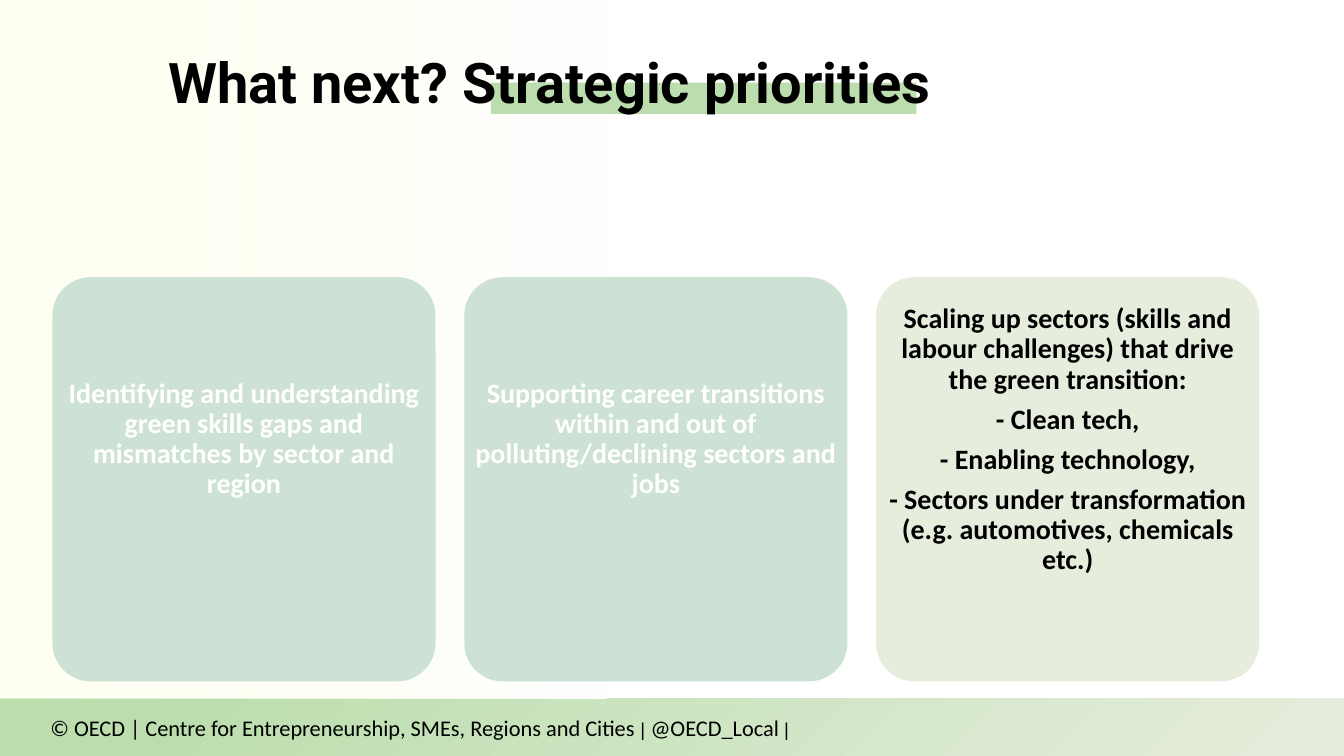
import pptx
import pptx.util
import pptx.dml.color
import pptx.enum.shapes
import pptx.enum.text
import pptx.oxml
import pptx.oxml.ns

Inches = pptx.util.Inches
Pt = pptx.util.Pt
SHAPE = pptx.enum.shapes.MSO_SHAPE
ALIGN = pptx.enum.text.PP_ALIGN
ANCHOR = pptx.enum.text.MSO_ANCHOR

COLORS = {
    "black": "000000",
    "white": "FFFFFF",
    "cream": "FFFFE7",
    "green": "BCDEAE",
    "mint": "CEE1D5",
    "sage": "E6EDDD",
}

CARD_W, CARD_H, CARD_TOP = 3.8, 4.01, 2.75
CARD_LEFT, CARD_PITCH = 0.52, 4.085

# Fill, text colour, text offset from the card top, paragraphs
CARDS = [
    ("mint", "white", 0.93,
     ["Identifying and understanding green skills gaps and mismatches by sector and region"]),
    ("mint", "white", 0.93,
     ["Supporting career transitions within and out of polluting/declining sectors and jobs"]),
    ("sage", "black", 0.19,
     ["Scaling up sectors (skills and labour challenges) that drive the green transition:",
      "- Clean tech,",
      "- Enabling technology,",
      "- Sectors under transformation (e.g. automotives, chemicals etc.)"]),
]

FOOTER = [
    ("© OECD | Centre for Entrepreneurship, SMEs, Regions and Cities", 16, "Calibri"),
    (" | ", 13.3, "Arial"),
    ("@OECD_Local", 16, "Calibri"),
    (" |", 13.3, "Arial"),
]


def rgb(name):
    return pptx.dml.color.RGBColor.from_string(COLORS[name])


def add_block(s, kind, x, y, w, h, fill=None):
    sp = s.shapes.add_shape(kind, Inches(x), Inches(y), Inches(w), Inches(h))
    sp.shadow.inherit = False
    sp.line.fill.background()
    if fill:
        sp.fill.solid()
        sp.fill.fore_color.rgb = rgb(fill)
    return sp


def set_gradient(sp, stops, direction):
    """Fill with (position %, colour, opacity %) stops; direction is the XML of the lin or path element."""
    gs = "".join(
        f'<a:gs pos="{pos * 1000}"><a:srgbClr val="{COLORS[color]}">'
        f'<a:alpha val="{alpha * 1000}"/></a:srgbClr></a:gs>'
        for pos, color, alpha in stops)
    grad = pptx.oxml.parse_xml(
        f'<a:gradFill {pptx.oxml.ns.nsdecls("a")} rotWithShape="1">'
        f'<a:gsLst>{gs}</a:gsLst>{direction}</a:gradFill>')
    sp._element.spPr.find(pptx.oxml.ns.qn("a:prstGeom")).addnext(grad)


def add_text_frame(s, x, y, w, h, anchor, inset):
    tf = s.shapes.add_textbox(Inches(x), Inches(y), Inches(w), Inches(h)).text_frame
    tf.word_wrap = True
    tf.vertical_anchor = anchor
    tf.margin_left = tf.margin_right = Inches(inset)
    tf.margin_top = tf.margin_bottom = Inches(0.08)
    return tf


def add_run(p, text, size, font, color, bold=False):
    r = p.add_run()
    r.text = text
    r.font.size = Pt(size)
    r.font.name = font
    r.font.bold = bold
    r.font.color.rgb = rgb(color)


def add_background(s):
    footer = add_block(s, SHAPE.RECTANGLE, 0, 6.93, 13.33, 0.57)
    set_gradient(footer, [(0, "sage", 100), (86, "green", 100)],
                 '<a:path path="circle"><a:fillToRect l="100000" t="100000"/></a:path>')
    glow = add_block(s, SHAPE.RECTANGLE, 0, 0, 6.02, 6.93)
    set_gradient(glow, [(0, "white", 100), (100, "cream", 50)],
                 '<a:lin ang="10800000" scaled="0"/>')


def add_footer_text(s):
    p = add_text_frame(s, 0.37, 7.02, 12, 0.4, ANCHOR.MIDDLE, 0.13).paragraphs[0]
    for text, size, font in FOOTER:
        add_run(p, text, size, font, "black")


def add_title(s):
    add_block(s, SHAPE.RECTANGLE, 4.87, 0.82, 4.22, 0.31, "green")
    p = add_text_frame(s, 1.57, 0.26, 10.81, 1.12, ANCHOR.MIDDLE, 0.1).paragraphs[0]
    p.line_spacing = Pt(45.3)
    add_run(p, "What next? Strategic priorities", 40, "Roboto", "black", True)


def add_card(s, x, fill, color, offset, lines):
    card = add_block(s, SHAPE.ROUNDED_RECTANGLE, x, CARD_TOP, CARD_W, CARD_H, fill)
    card.adjustments[0] = 0.1
    tf = add_text_frame(s, x, CARD_TOP + offset, CARD_W, CARD_H - offset, ANCHOR.TOP, 0.08)
    for i, line in enumerate(lines):
        p = tf.paragraphs[0] if i == 0 else tf.add_paragraph()
        p.alignment = ALIGN.CENTER
        p.line_spacing = 0.9
        p.space_after = Pt(7)
        add_run(p, line, 20, "Calibri", color, True)


def main():
    prs = pptx.Presentation()
    prs.slide_width = Inches(13.33)
    prs.slide_height = Inches(7.5)
    s = prs.slides.add_slide(prs.slide_layouts[6])
    add_background(s)
    add_footer_text(s)
    add_title(s)
    for i, card in enumerate(CARDS):
        add_card(s, CARD_LEFT + i * CARD_PITCH, *card)
    prs.save("out.pptx")


if __name__ == "__main__":
    main()
